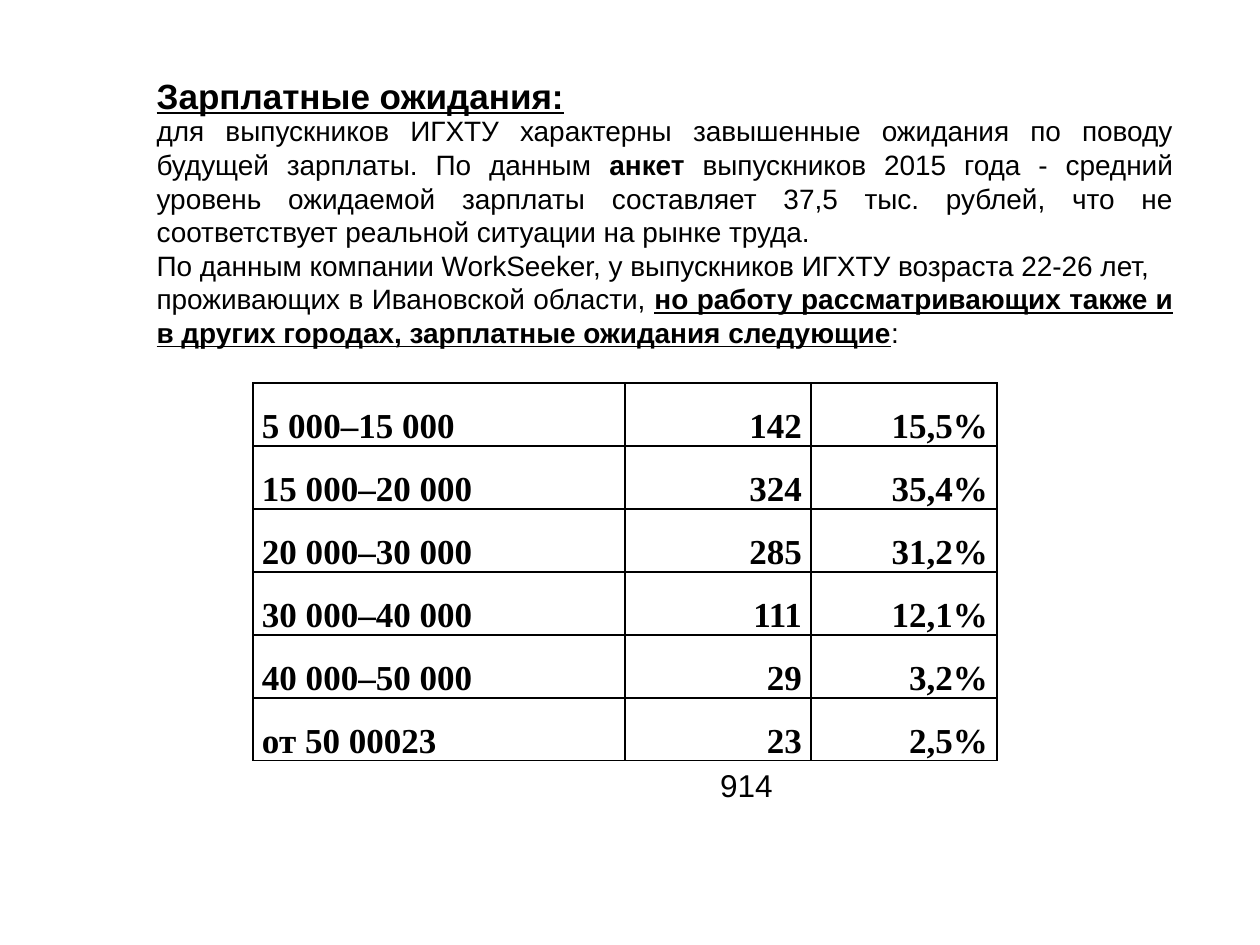
"""Build the slide about graduates' salary expectations."""
import dataclasses

import lxml.etree
import pptx
import pptx.dml.color
import pptx.enum.text
import pptx.oxml.ns
import pptx.util


@dataclasses.dataclass(frozen=True)
class Theme:
    ink: pptx.dml.color.RGBColor = pptx.dml.color.RGBColor(0, 0, 0)
    sans: str = "Arial"
    serif: str = "Times New Roman"
    heading: int = 20
    body: int = 16
    total: int = 18
    cell: int = 20
    body_line: float = 19.2


THEME = Theme()
PX = 914400 // 126
ALIGN = pptx.enum.text.PP_ALIGN
ANCHOR = pptx.enum.text.MSO_ANCHOR


def add_run(paragraph, text, size, font=THEME.sans, bold=False, underline=False):
    run = paragraph.add_run()
    run.text = text
    run.font.name = font
    run.font.size = pptx.util.Pt(size)
    run.font.bold = bold
    run.font.underline = underline
    run.font.color.rgb = THEME.ink


def place(shape, left, top, width, height):
    shape.left, shape.top = left * PX, top * PX
    shape.width, shape.height = width * PX, height * PX
    frame = shape.text_frame
    frame.auto_size = pptx.enum.text.MSO_AUTO_SIZE.NONE
    frame.vertical_anchor = ANCHOR.TOP
    frame.margin_top = frame.margin_bottom = 0
    return frame


presentation = pptx.Presentation()
presentation.slide_width = 1260 * PX
presentation.slide_height = 945 * PX
slide = presentation.slides.add_slide(presentation.slide_layouts[1])

heading = place(slide.shapes.title, 144, 74, 1042, 40).paragraphs[0]
heading.alignment = ALIGN.JUSTIFY
add_run(heading, "Зарплатные ожидания:", THEME.heading, bold=True, underline=True)

BODY = [
    [
        ("для выпускников ИГХТУ характерны завышенные ожидания по поводу будущей зарплаты. По данным ", False, False),
        ("анкет ", True, False),
        ("выпускников 2015 года - средний уровень ожидаемой зарплаты составляет 37,5 тыс. рублей, "
         "что не соответствует реальной ситуации на рынке труда.", False, False),
    ],
    [("По данным компании WorkSeeker, у выпускников ИГХТУ возраста 22-26 лет, ", False, False)],
    [
        ("проживающих в Ивановской области, ", False, False),
        ("но работу рассматривающих также и в других городах, зарплатные ожидания следующие", True, True),
        (":", False, False),
    ],
]
body = place(slide.placeholders[1], 144, 114, 1042, 244)
for index, runs in enumerate(BODY):
    paragraph = body.add_paragraph() if index else body.paragraphs[0]
    paragraph.alignment = ALIGN.JUSTIFY
    paragraph.space_before = pptx.util.Pt(0)
    paragraph.line_spacing = pptx.util.Pt(THEME.body_line)
    properties = paragraph._p.get_or_add_pPr()
    properties.set("marL", "0")
    properties.set("indent", "0")
    lxml.etree.SubElement(properties, pptx.oxml.ns.qn("a:buNone"))
    for text, bold, underline in runs:
        add_run(paragraph, text, THEME.body, bold=bold, underline=underline)

ROWS = [
    ("5 000–15 000", "142", "15,5%"),
    ("15 000–20 000", "324", "35,4%"),
    ("20 000–30 000", "285", "31,2%"),
    ("30 000–40 000", "111", "12,1%"),
    ("40 000–50 000", "29", "3,2%"),
    ("от 50 00023", "23", "2,5%"),
]
COLUMNS = [372, 186, 186]
ROW_HEIGHT = 63
table = slide.shapes.add_table(
    len(ROWS), len(COLUMNS), 253 * PX, 383 * PX, sum(COLUMNS) * PX, len(ROWS) * ROW_HEIGHT * PX
).table
table.first_row = table.horz_banding = False
for column, width in zip(table.columns, COLUMNS):
    column.width = width * PX
for row, values in zip(table.rows, ROWS):
    row.height = ROW_HEIGHT * PX
    for index, (cell, value) in enumerate(zip(row.cells, values)):
        cell.vertical_anchor = ANCHOR.BOTTOM
        cell.margin_left = cell.margin_right = 9 * PX
        cell.margin_top = cell.margin_bottom = 0
        properties = cell._tc.get_or_add_tcPr()
        for side in ("a:lnL", "a:lnR", "a:lnT", "a:lnB"):
            border = lxml.etree.SubElement(properties, pptx.oxml.ns.qn(side), w=str(pptx.util.Pt(1)))
            fill = lxml.etree.SubElement(border, pptx.oxml.ns.qn("a:solidFill"))
            lxml.etree.SubElement(fill, pptx.oxml.ns.qn("a:srgbClr"), val=str(THEME.ink))
        cell.fill.background()
        paragraph = cell.text_frame.paragraphs[0]
        paragraph.alignment = ALIGN.RIGHT if index else ALIGN.JUSTIFY
        paragraph.line_spacing = 1.5
        add_run(paragraph, value, THEME.cell, THEME.serif, bold=True)

total = slide.shapes.add_textbox(699 * PX, 760 * PX, 87 * PX, 50 * PX).text_frame
total.word_wrap = False
total.auto_size = pptx.enum.text.MSO_AUTO_SIZE.SHAPE_TO_FIT_TEXT
add_run(total.paragraphs[0], " 914", THEME.total)

presentation.save("out.pptx")
